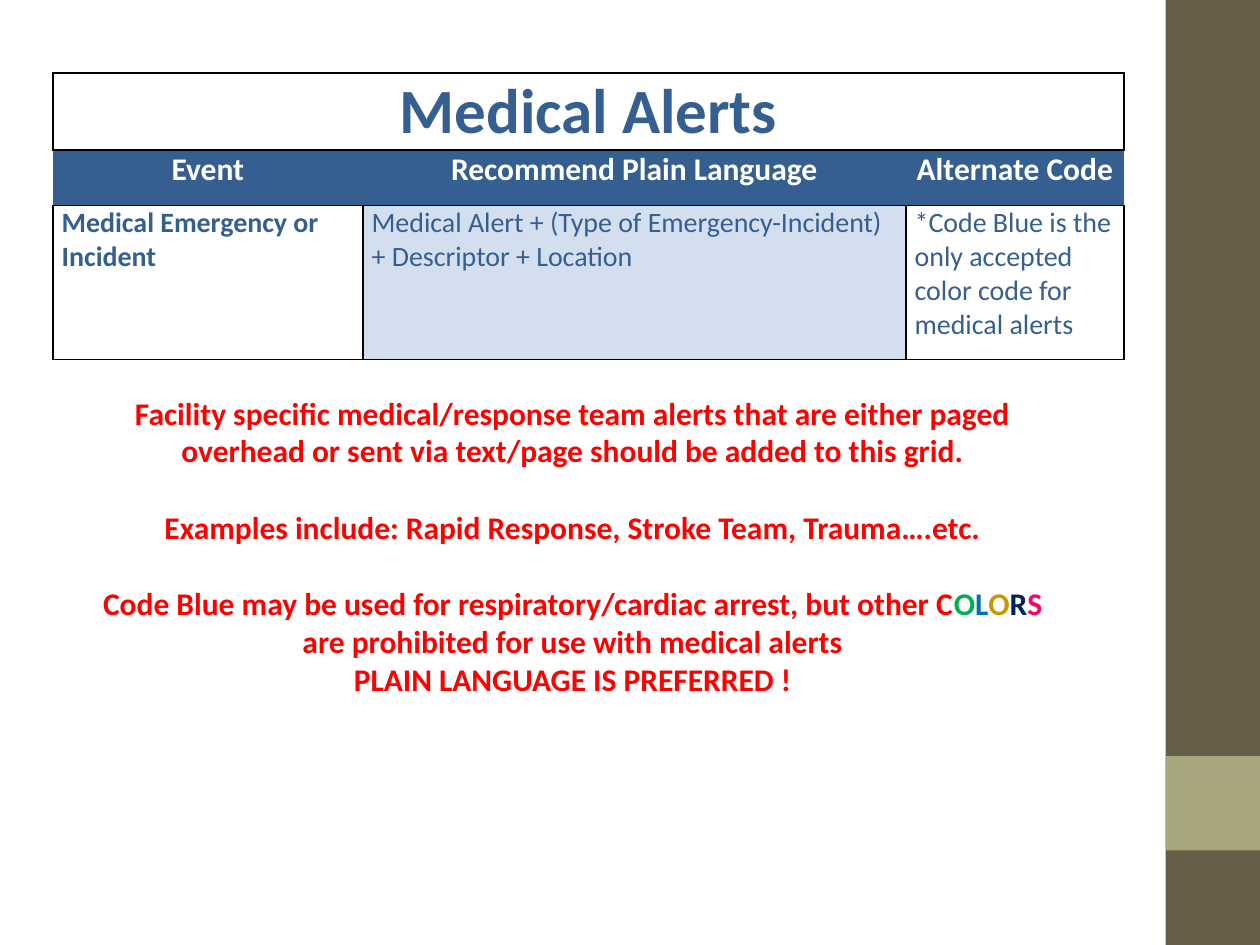
import pptx
import pptx.dml.color
import pptx.enum.shapes
import pptx.enum.text
import pptx.oxml.ns
import pptx.util
from lxml import etree

RGBColor = pptx.dml.color.RGBColor
BROWN = RGBColor(0x67, 0x5E, 0x47)
OLIVE = RGBColor(0xA9, 0xA5, 0x7C)
BLUE = RGBColor(0x36, 0x5F, 0x91)
PALE_BLUE = RGBColor(0xD3, 0xDF, 0xEE)
WHITE = RGBColor(0xFF, 0xFF, 0xFF)
BLACK = RGBColor(0, 0, 0)
RED = RGBColor(0xFF, 0, 0)
LETTER_COLORS = {
    "O": RGBColor(0, 0xB0, 0x50),
    "L": RGBColor(0, 0x70, 0xC0),
    "O ": RGBColor(0xC8, 0x98, 0),
    "R": RGBColor(0, 0x20, 0x60),
    "S": RGBColor(0xFF, 0, 0x66),
}

FONT = "Calibri"
WIDTH, HEIGHT = pptx.util.Inches(10), pptx.util.Inches(7.5)
COLUMNS = (2.46, 4.31, 1.73)
ROWS = (0.56, 0.44, 1.22)
CENTER = pptx.enum.text.PP_ALIGN.CENTER
LEFT = pptx.enum.text.PP_ALIGN.LEFT

HEADINGS = ("Event", "Recommend Plain Language", "Alternate Code")
MEDICAL_EVENT = (
    "Medical Emergency or Incident",
    "Medical Alert + (Type of Emergency-Incident) + Descriptor + Location",
    "*Code Blue is the only accepted color code for medical alerts",
)


def add_band(slide, top, height, color):
    """Add a block of the right-hand side bar; top and height are shares of the slide."""
    band = slide.shapes.add_shape(
        pptx.enum.shapes.MSO_SHAPE.RECTANGLE,
        int(WIDTH * 0.925), int(HEIGHT * top), int(WIDTH * 0.075), int(HEIGHT * height))
    band.shadow.inherit = False
    band.fill.solid()
    band.fill.fore_color.rgb = color
    band.line.fill.background()


def set_font(font, size, color, bold=True):
    font.name = FONT
    font.size = pptx.util.Pt(size)
    font.bold = bold
    font.color.rgb = color


def set_borders(cell, sides):
    """Draw a black 1 pt line on the given sides (L, R, T, B) and none on the others."""
    properties = cell._tc.get_or_add_tcPr()
    for position, side in enumerate("LRTB"):
        line = etree.Element(pptx.oxml.ns.qn(f"a:ln{side}"), w=str(pptx.util.Pt(1)))
        if side in sides:
            fill = etree.SubElement(line, pptx.oxml.ns.qn("a:solidFill"))
            etree.SubElement(fill, pptx.oxml.ns.qn("a:srgbClr"), val=str(BLACK))
        else:
            etree.SubElement(line, pptx.oxml.ns.qn("a:noFill"))
        properties.insert(position, line)


def fill_cell(cell, text, size, color, align=LEFT, bold=True, background=None, sides="LRTB"):
    cell.margin_left = cell.margin_right = pptx.util.Inches(0.07)
    cell.margin_top = cell.margin_bottom = 0
    if background is None:
        cell.fill.background()
    else:
        cell.fill.solid()
        cell.fill.fore_color.rgb = background
    set_borders(cell, sides)
    paragraph = cell.text_frame.paragraphs[0]
    paragraph.text = text
    paragraph.alignment = align
    set_font(paragraph.font, size, color, bold)


def add_alert_table(slide):
    table = slide.shapes.add_table(
        len(ROWS), len(COLUMNS), pptx.util.Inches(0.42), pptx.util.Inches(0.58),
        pptx.util.Inches(sum(COLUMNS)), pptx.util.Inches(sum(ROWS))).table
    table.first_row = table.horz_banding = False
    for column, width in zip(table.columns, COLUMNS):
        column.width = pptx.util.Inches(width)
    for row, height in zip(table.rows, ROWS):
        row.height = pptx.util.Inches(height)

    table.cell(0, 0).merge(table.cell(0, 2))
    for index in range(len(COLUMNS)):
        title = "Medical Alerts" if index == 0 else ""
        fill_cell(table.cell(0, index), title, 36, BLUE, CENTER)
        fill_cell(table.cell(1, index), HEADINGS[index], 18, WHITE, CENTER,
                  background=BLUE, sides="TB")
        fill_cell(table.cell(2, index), MEDICAL_EVENT[index], 16, BLUE,
                  bold=index == 0, background=PALE_BLUE if index == 1 else None)


def add_guidance(slide):
    box = slide.shapes.add_textbox(
        int(WIDTH * 0.067), int(HEIGHT * 0.41), int(WIDTH * 0.775), int(HEIGHT * 0.336))
    frame = box.text_frame
    frame.word_wrap = True
    color_rule = [("Code Blue may be used for respiratory/cardiac arrest, but other C", RED)]
    color_rule += [(letter.strip(), color) for letter, color in LETTER_COLORS.items()]
    color_rule += [(" are prohibited for use with medical alerts", RED)]
    guidance = (
        (0, [("Facility specific medical/response team alerts that are either paged "
              "overhead or sent via text/page should be added to this grid.", RED)]),
        (22, [("Examples include: Rapid Response, Stroke Team, Trauma….etc.", RED)]),
        (22, color_rule),
        (0, [("PLAIN LANGUAGE IS PREFERRED !", RED)]),
    )
    for index, (gap, pieces) in enumerate(guidance):
        paragraph = frame.add_paragraph() if index else frame.paragraphs[0]
        paragraph.alignment = CENTER
        paragraph.space_before = pptx.util.Pt(gap)
        set_font(paragraph.font, 18, RED)
        for text, color in pieces:
            run = paragraph.add_run()
            run.text = text
            if color != RED:
                run.font.color.rgb = color


def main():
    presentation = pptx.Presentation()
    presentation.slide_width, presentation.slide_height = WIDTH, HEIGHT
    slide = presentation.slides.add_slide(presentation.slide_layouts[6])
    add_band(slide, 0, 1, BROWN)
    add_band(slide, 0.8, 0.1, OLIVE)
    add_alert_table(slide)
    add_guidance(slide)
    presentation.save("out.pptx")


if __name__ == "__main__":
    main()
